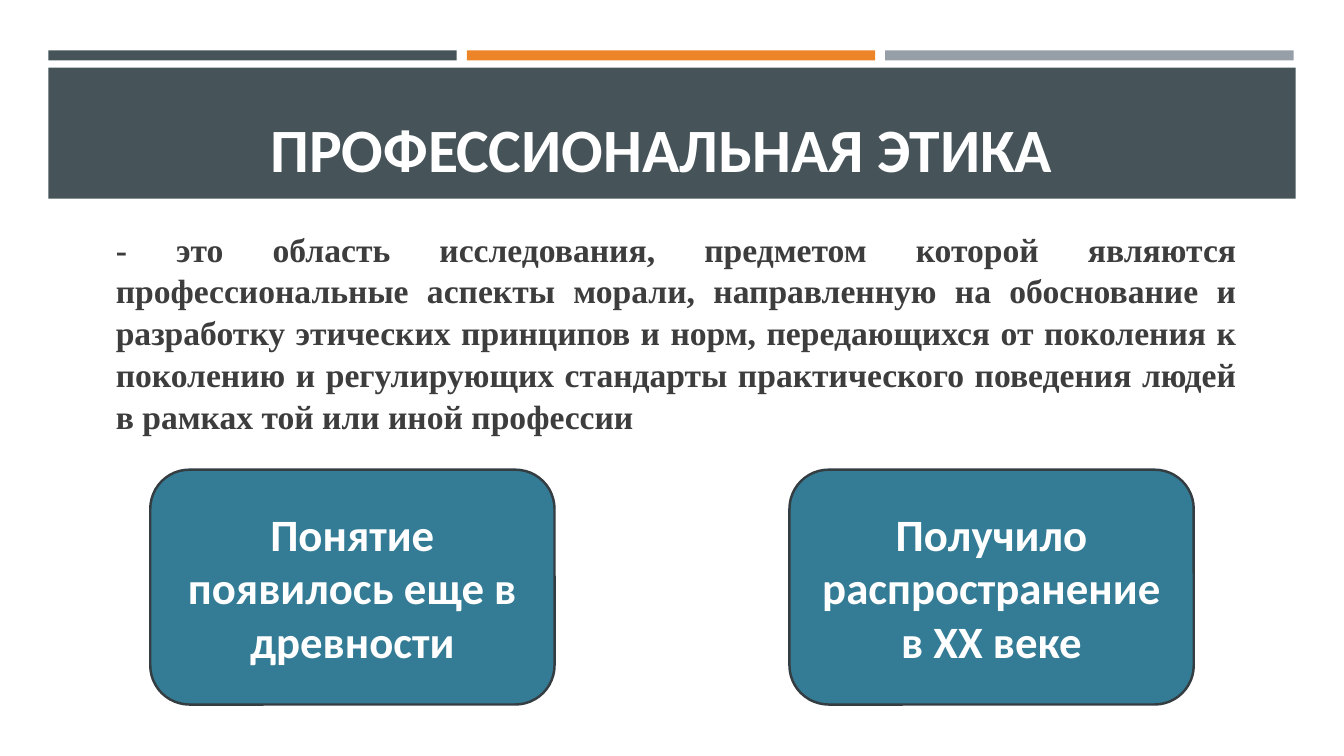
import dataclasses

import pptx
import pptx.dml.color
import pptx.enum.shapes
import pptx.enum.text
import pptx.util

SCALE = 9144
SHAPES = pptx.enum.shapes.MSO_SHAPE
ALIGN = pptx.enum.text.PP_ALIGN
ANCHOR = pptx.enum.text.MSO_ANCHOR


@dataclasses.dataclass(frozen=True)
class Theme:
    """Colours, fonts and type sizes of the slide."""
    slate: str = "465359"
    orange: str = "ED8428"
    grey: str = "969FA7"
    teal: str = "347C95"
    outline: str = "343D42"
    white: str = "FFFFFF"
    ink: str = "3D3D3D"
    sans: str = "Calibri"
    serif: str = "Times New Roman"
    title_size: int = 44
    body_size: int = 24
    card_size: int = 32


THEME = Theme()


def px(length):
    """Turn px into EMU."""
    return pptx.util.Emu(length * SCALE)


def colour(code):
    """Turn a hex code into a colour."""
    return pptx.dml.color.RGBColor.from_string(code)


def add_panel(page, box, fill, kind=SHAPES.RECTANGLE, outline=None):
    """Add a flat filled shape in the box."""
    panel = page.shapes.add_shape(kind, *map(px, box))
    panel.shadow.inherit = False
    panel.fill.solid()
    panel.fill.fore_color.rgb = colour(fill)
    if outline:
        panel.line.color.rgb = colour(outline)
        panel.line.width = pptx.util.Pt(1.75)
    else:
        panel.line.fill.background()
    return panel


def write(shape, text, font, size, ink, align, anchor):
    """Write one bold paragraph into a shape and return it."""
    frame = shape.text_frame
    frame.word_wrap = True
    frame.vertical_anchor = anchor
    frame.text = text
    para = frame.paragraphs[0]
    para.alignment = align
    for span in para.runs:
        span.font.name = font
        span.font.size = pptx.util.Pt(size)
        span.font.bold = True
        span.font.color.rgb = colour(ink)
    return para


def add_header(page, box):
    """Draw the three stripes and the title band."""
    left, top, width, height = box
    gap, stripe, band_top = 10, 10, 17
    stripe_width = (width - 2 * gap) // 3
    for index, fill in enumerate((THEME.slate, THEME.orange, THEME.grey)):
        stripe_left = left + index * (stripe_width + gap)
        add_panel(page, (stripe_left, top, stripe_width, stripe), fill)
    add_panel(page, (left, top + band_top, width, height - band_top), THEME.slate)
    title = page.shapes.add_textbox(px(left + 43), px(top + 27), px(1131), px(111))
    write(title, "ПРОФЕССИОНАЛЬНАЯ ЭТИКА", THEME.sans, THEME.title_size,
          THEME.white, ALIGN.CENTER, ANCHOR.BOTTOM)


def add_definition(page, box):
    """Write the justified definition."""
    definition = page.shapes.add_textbox(*map(px, box))
    para = write(
        definition,
        "- это область исследования, предметом которой являются "
        "профессиональные аспекты морали, направленную на обоснование и "
        "разработку этических принципов и норм, передающихся от поколения к "
        "поколению и регулирующих стандарты практического поведения людей "
        "в рамках той или иной профессии",
        THEME.serif, THEME.body_size, THEME.ink, ALIGN.JUSTIFY, ANCHOR.MIDDLE)
    para.line_spacing = 1.04


def add_cards(page, box):
    """Place two rounded cards at the ends of the box."""
    left, top, width, height = box
    card_width = 401
    texts = ("Понятие появилось еще в древности",
             "Получило распространение в ХХ веке")
    for index, text in enumerate(texts):
        card_left = left + index * (width - card_width)
        card = add_panel(page, (card_left, top, card_width, height), THEME.teal,
                         SHAPES.ROUNDED_RECTANGLE, THEME.outline)
        write(card, text, THEME.sans, THEME.card_size, THEME.white,
              ALIGN.CENTER, ANCHOR.MIDDLE)


def main():
    """Build and save the slide."""
    deck = pptx.Presentation()
    deck.slide_width, deck.slide_height = px(1333), px(750)
    page = deck.slides.add_slide(deck.slide_layouts[6])
    add_header(page, (48, 50, 1237, 147))
    add_definition(page, (105, 218, 1131, 222))
    add_cards(page, (149, 466, 1035, 233))
    deck.save("out.pptx")


if __name__ == "__main__":
    main()
